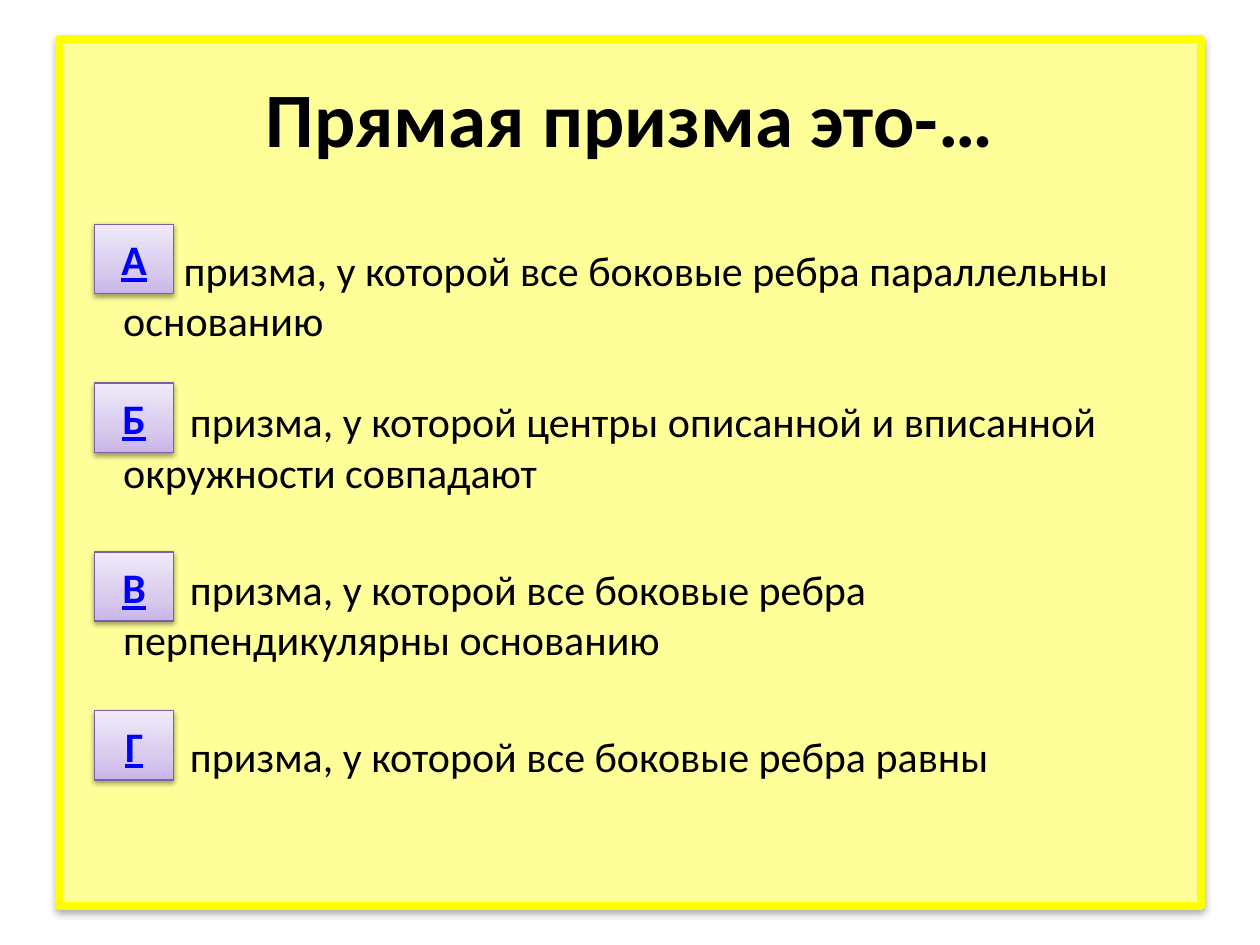
from copy import deepcopy
from dataclasses import dataclass

from lxml import etree
from pptx import Presentation
from pptx.dml.color import RGBColor
from pptx.enum import shapes, text
from pptx.oxml.ns import qn
from pptx.util import Inches, Pt


@dataclass(frozen=True)
class Theme:
    font: str = "Calibri"
    title_size: int = 44
    body_size: int = 24
    ink: str = "000000"
    link: str = "0000FF"
    panel: str = "FFFF99"
    panel_edge: str = "FFFF00"
    button_edge: str = "7D60A0"
    button_stops: tuple = ((0, "C9B5E8"), (0.35, "D8CBEE"), (1, "F0EAF9"))


THEME = Theme()
TITLE = "Прямая призма это-…"
# Letter, button top, first-line indent, space before, answer
ANSWERS = [
    ("А", 1.78, 0.48, 0, "призма, у которой все боковые ребра параллельны основанию"),
    ("Б", 3.04, 0.53, 29, "призма, у которой центры описанной и вписанной окружности совпадают"),
    ("В", 4.38, 0.53, 38, "призма, у которой все боковые ребра перпендикулярны основанию"),
    ("Г", 5.64, 0.53, 38, "призма, у которой все боковые ребра равны"),
]


def rgb(value):
    return RGBColor.from_string(value)


def set_all(obj, **values):
    for name, value in values.items():
        setattr(obj, name, value)


def set_font(font, size, color, **values):
    set_all(font, name=THEME.font, size=Pt(size), **values)
    font.color.rgb = rgb(color)


def set_shadow(sp, alpha, blur, dist):
    """Soft black shadow falling straight down."""
    sp.shadow.inherit = False
    effects = sp._element.spPr.find(qn("a:effectLst"))
    outer = etree.SubElement(effects, qn("a:outerShdw"), blurRad=str(Pt(blur)),
                             dist=str(Pt(dist)), dir="5400000", rotWithShape="0")
    color = etree.SubElement(outer, qn("a:srgbClr"), val="000000")
    etree.SubElement(color, qn("a:alpha"), val=str(alpha * 1000))


def add_rect(s, box, edge, width):
    sp = s.shapes.add_shape(shapes.MSO_SHAPE.RECTANGLE, *map(Inches, box))
    sp.line.color.rgb = rgb(edge)
    sp.line.width = Pt(width)
    return sp


def add_panel(s, box):
    sp = add_rect(s, box, THEME.panel_edge, 4.5)
    sp.fill.solid()
    sp.fill.fore_color.rgb = rgb(THEME.panel)
    set_shadow(sp, 32, 3.5, 2.2)
    # Behind the title
    s.shapes._spTree.insert(2, sp._element)


def add_title(s, box):
    sp = s.shapes.title
    left, top, width, height = map(Inches, box)
    set_all(sp, left=left, top=top, width=width, height=height)
    tf = sp.text_frame
    tf.text = TITLE
    tf.vertical_anchor = text.MSO_ANCHOR.MIDDLE
    p = tf.paragraphs[0]
    p.alignment = text.PP_ALIGN.CENTER
    set_font(p.runs[0].font, THEME.title_size, THEME.ink, bold=True)


def add_button(s, box, letter):
    sp = add_rect(s, box, THEME.button_edge, 0.75)
    # Three-stop gradient, darkest at the bottom
    sp.fill.gradient()
    sp.fill.gradient_angle = 90
    stops = sp._element.spPr.find(".//" + qn("a:gsLst"))
    stops.append(deepcopy(stops[-1]))
    for stop, (position, color) in zip(sp.fill.gradient_stops, THEME.button_stops):
        stop.position = position
        stop.color.rgb = rgb(color)
    set_shadow(sp, 38, 3.1, 1.6)
    tf = sp.text_frame
    set_all(tf, word_wrap=False, vertical_anchor=text.MSO_ANCHOR.MIDDLE)
    p = tf.paragraphs[0]
    p.alignment = text.PP_ALIGN.CENTER
    r = p.add_run()
    r.text = letter
    set_font(r.font, THEME.body_size, THEME.link, bold=True, underline=True)


def add_answers(s, box):
    left, top, width, height = box
    tf = s.shapes.add_textbox(*map(Inches, box)).text_frame
    tf.word_wrap = True
    for i, (letter, button_top, indent, space, answer) in enumerate(ANSWERS):
        p = tf.add_paragraph() if i else tf.paragraphs[0]
        if space:
            p.space_before = Pt(space)
        # The first line starts to the right of the button
        pPr = p._p.get_or_add_pPr()
        pPr.set("marL", str(Inches(0.38)))
        pPr.set("indent", str(Inches(indent)))
        r = p.add_run()
        r.text = answer
        set_font(r.font, THEME.body_size, THEME.ink)
        add_button(s, (left + 0.25, button_top, 0.63, 0.55), letter)


def main():
    prs = Presentation()
    set_all(prs, slide_width=Inches(10), slide_height=Inches(7.5))
    s = prs.slides.add_slide(prs.slide_layouts[5])
    add_panel(s, (0.47, 0.31, 9.06, 6.88))
    add_title(s, (0.5, 0.3, 9, 1.25))
    add_answers(s, (0.5, 1.89, 9, 4.8))
    prs.save("out.pptx")


if __name__ == "__main__":
    main()
